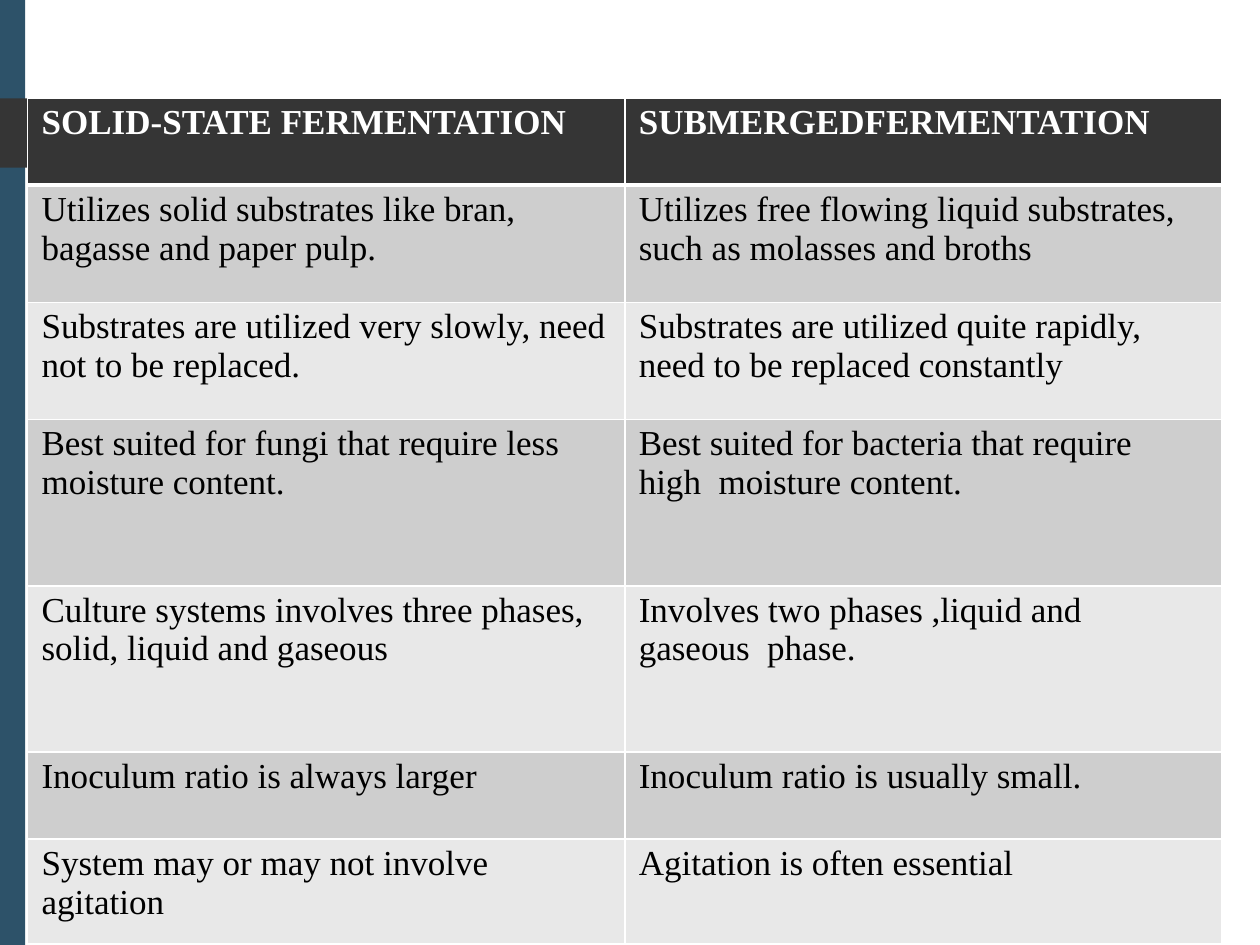
import pptx
import pptx.util
import pptx.dml.color
import pptx.enum.shapes
import pptx.oxml
import pptx.oxml.ns
from lxml import etree

Inches = pptx.util.Inches
Pt = pptx.util.Pt

COLORS = {
    "side": "2D5269",
    "dark": "353535",
    "odd": "CECECE",
    "even": "E8E8E8",
    "white": "FFFFFF",
    "text": "000000",
}
FONT = "Times New Roman"

COMPARISON = [
    (["SOLID-STATE FERMENTATION"], ["SUBMERGEDFERMENTATION"]),
    (["Utilizes solid substrates like bran,  bagasse and paper pulp."],
     ["Utilizes free flowing liquid substrates,  such as molasses and broths"]),
    (["Substrates are utilized very slowly, need", "not to be replaced."],
     ["Substrates are utilized quite rapidly,", "need to be replaced constantly"]),
    (["Best suited for fungi that require less  moisture content."],
     ["Best suited for bacteria that require high  moisture content."]),
    (["Culture systems involves three phases,  solid, liquid and gaseous"],
     ["Involves two phases ,liquid and gaseous  phase."]),
    (["Inoculum ratio is always larger"], ["Inoculum ratio is usually small."]),
    (["System may or may not involve", "agitation"], ["Agitation is often essential"]),
]
ROW_HEIGHTS = [0.69, 0.93, 0.93, 1.32, 1.32, 0.69, 0.83]
COLUMN_WIDTH = 4.74
RIGHT_MARGINS = [0, 0.25]


def rgb(name):
    return pptx.dml.color.RGBColor.from_string(COLORS[name])


def add_block(slide, preset, left, top, width, height, color):
    block = slide.shapes.add_shape(
        preset, Inches(left), Inches(top), Inches(width), Inches(height))
    block.shadow.inherit = False
    block.fill.solid()
    block.fill.fore_color.rgb = rgb(color)
    block.line.fill.background()
    return block


def set_borders(cell, widths):
    properties = cell._tc.get_or_add_tcPr()
    for position, (side, width) in enumerate(widths.items()):
        border = etree.Element(pptx.oxml.ns.qn(f"a:{side}"), w=str(Pt(width)))
        fill = etree.SubElement(border, pptx.oxml.ns.qn("a:solidFill"))
        etree.SubElement(fill, pptx.oxml.ns.qn("a:srgbClr"), val=COLORS["white"])
        properties.insert(position, border)


def fill_cell(cell, lines, row, column):
    is_header = row == 0
    cell.fill.solid()
    cell.fill.fore_color.rgb = rgb("dark" if is_header else "odd" if row % 2 else "even")
    cell.margin_left = Inches(0.11)
    cell.margin_right = Inches(RIGHT_MARGINS[column])
    cell.margin_top = Inches(0.04)
    cell.margin_bottom = 0
    for index, line in enumerate(lines):
        frame = cell.text_frame
        paragraph = frame.add_paragraph() if index else frame.paragraphs[0]
        run = paragraph.add_run()
        run.text = line
        run.font.name = FONT
        run.font.size = Pt(20)
        run.font.bold = is_header
        run.font.color.rgb = rgb("white" if is_header else "text")
    set_borders(cell, {"lnL": 1, "lnR": 1,
                       "lnT": 3 if row == 1 else 1,
                       "lnB": 3 if is_header else 1})


def main():
    deck = pptx.Presentation()
    deck.slide_width = Inches(10)
    deck.slide_height = Inches(7.5)
    slide = deck.slides.add_slide(deck.slide_layouts[6])

    presets = pptx.enum.shapes.MSO_SHAPE
    add_block(slide, presets.RECTANGLE, 0, 0, 0.2, 7.5, "side")
    tab = add_block(slide, presets.PENTAGON, 0, 0.78, 1.49, 0.55, "dark")
    tab.adjustments[0] = 0.47

    table = slide.shapes.add_table(
        len(COMPARISON), 2, Inches(0.22), Inches(0.78),
        Inches(2 * COLUMN_WIDTH), Inches(sum(ROW_HEIGHTS))).table
    for column in table.columns:
        column.width = Inches(COLUMN_WIDTH)
    for row, (cells, height) in enumerate(zip(COMPARISON, ROW_HEIGHTS)):
        table.rows[row].height = Inches(height)
        for column, lines in enumerate(cells):
            fill_cell(table.cell(row, column), lines, row, column)

    deck.save("out.pptx")


if __name__ == "__main__":
    main()
